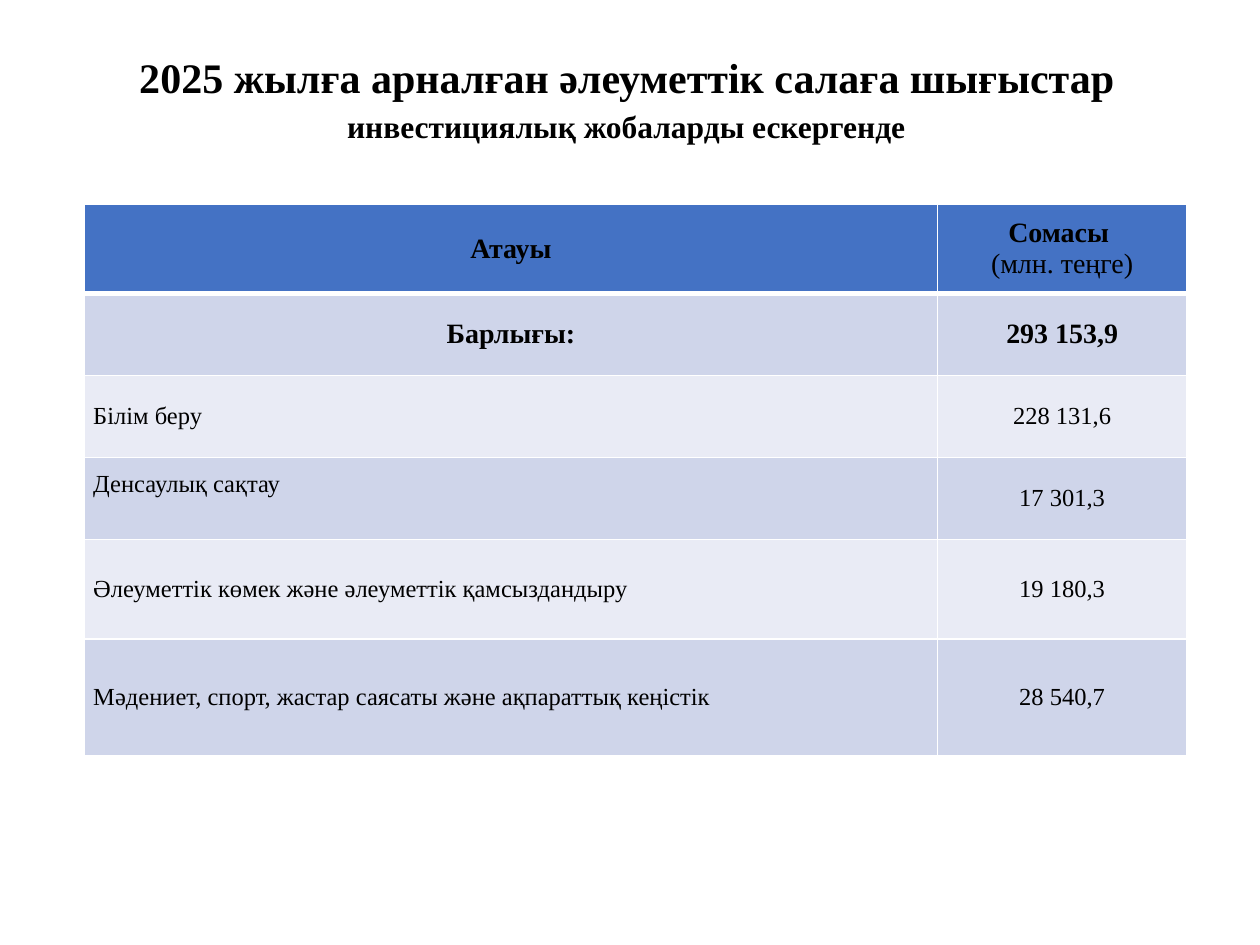
from pptx import Presentation
from pptx import util as u
from pptx.dml.color import RGBColor
from pptx.enum import text
from pptx.oxml import parse_xml
from pptx.oxml.ns import nsdecls

FONT = "Times New Roman"
MID, LEFT = text.PP_ALIGN.CENTER, text.PP_ALIGN.LEFT
BLUE, DARK, PALE, WHITE = "4472C4", "CFD5EA", "E9EBF5", "FFFFFF"
COLS = [6.77, 1.98]
ROWS = [0.71, 0.65, 0.65, 0.65, 0.79, 0.93]
DATA = [
    ("Барлығы:", "293 153,9"),
    ("Білім беру", "228 131,6"),
    ("Денсаулық сақтау", "17 301,3"),
    ("Әлеуметтік көмек және әлеуметтік қамсыздандыру", "19 180,3"),
    ("Мәдениет, спорт, жастар саясаты және ақпараттық кеңістік", "28 540,7"),
]


def color(code):
    return RGBColor.from_string(code)


def write(frame, line, size=14, bold=False, align=MID, space=None, more=False):
    """Put one line in the frame, or add it as a further paragraph."""
    par = frame.add_paragraph() if more else frame.paragraphs[0]
    par.alignment = align
    if space:
        par.line_spacing = space
    run = par.add_run()
    run.text = line
    font = run.font
    font.name, font.size, font.bold = FONT, u.Pt(size), bold
    font.color.rgb = color("000000")


def label(slide, box, line, anchor, left=0.1, **form):
    frame = slide.shapes.add_textbox(*map(u.Inches, box)).text_frame
    frame.word_wrap = True
    frame.vertical_anchor = anchor
    frame.margin_left = u.Inches(left)
    write(frame, line, bold=True, **form)


def pad(cell, side, top, foot):
    cell.margin_left = cell.margin_right = u.Inches(side)
    cell.margin_top, cell.margin_bottom = u.Inches(top), u.Inches(foot)


def paint(cell, fill, top=1, foot=1):
    """Fill the cell and draw its white borders, widths in points."""
    cell.vertical_anchor = text.MSO_ANCHOR.MIDDLE
    cell.fill.solid()
    cell.fill.fore_color.rgb = color(fill)
    props = cell._tc.get_or_add_tcPr()
    edges = [("lnL", 1), ("lnR", 1), ("lnT", top), ("lnB", foot)]
    for spot, (tag, width) in enumerate(edges):
        props.insert(spot, parse_xml(
            f'<a:{tag} {nsdecls("a")} w="{u.Pt(width)}"><a:solidFill>'
            f'<a:srgbClr val="{WHITE}"/></a:solidFill></a:{tag}>'))


def heading(slide, box):
    x, y, w, h = box
    label(slide, (x, y, w, 0.49),
          "2025 жылға арналған әлеуметтік салаға шығыстар",
          text.MSO_ANCHOR.BOTTOM, size=24, space=0.9)
    label(slide, (1.53, y + 0.43, 6.61, h - 0.43),
          "инвестициялық жобаларды ескергенде",
          text.MSO_ANCHOR.TOP, left=0.37, size=18)


def budget(slide, box):
    table = slide.shapes.add_table(
        len(ROWS), len(COLS), *map(u.Inches, box)).table
    for col, width in zip(table.columns, COLS):
        col.width = u.Inches(width)
    for row, height in zip(table.rows, ROWS):
        row.height = u.Inches(height)

    # Header row
    name, total = table.rows[0].cells
    for cell in (name, total):
        pad(cell, 0, 0, 0)
        paint(cell, BLUE, foot=3)
    write(name.text_frame, "Атауы", size=16, bold=True)
    write(total.text_frame, "Сомасы ", size=16, bold=True)
    write(total.text_frame, "(млн. теңге)", size=16, more=True)

    # Total row, then spending areas
    for r, pair in enumerate(DATA, 1):
        first = r == 1
        for c, line in enumerate(pair):
            cell = table.cell(r, c)
            pad(cell, 0.07, 0.04, 0.04)
            paint(cell, DARK if r % 2 else PALE, top=3 if first else 1)
            write(cell.text_frame, line, size=16 if first else 14, bold=first,
                  align=MID if first or c else LEFT)
    # The health label sits above the middle of its row
    table.cell(3, 0).margin_bottom = u.Inches(0.26)


def main():
    deck = Presentation()
    deck.slide_width, deck.slide_height = u.Inches(10), u.Inches(7.5)
    slide = deck.slides.add_slide(deck.slide_layouts[6])
    heading(slide, (0.52, 0.37, 8.91, 1.14))
    budget(slide, (0.67, 1.62, sum(COLS), sum(ROWS)))
    deck.save("out.pptx")


if __name__ == "__main__":
    main()
